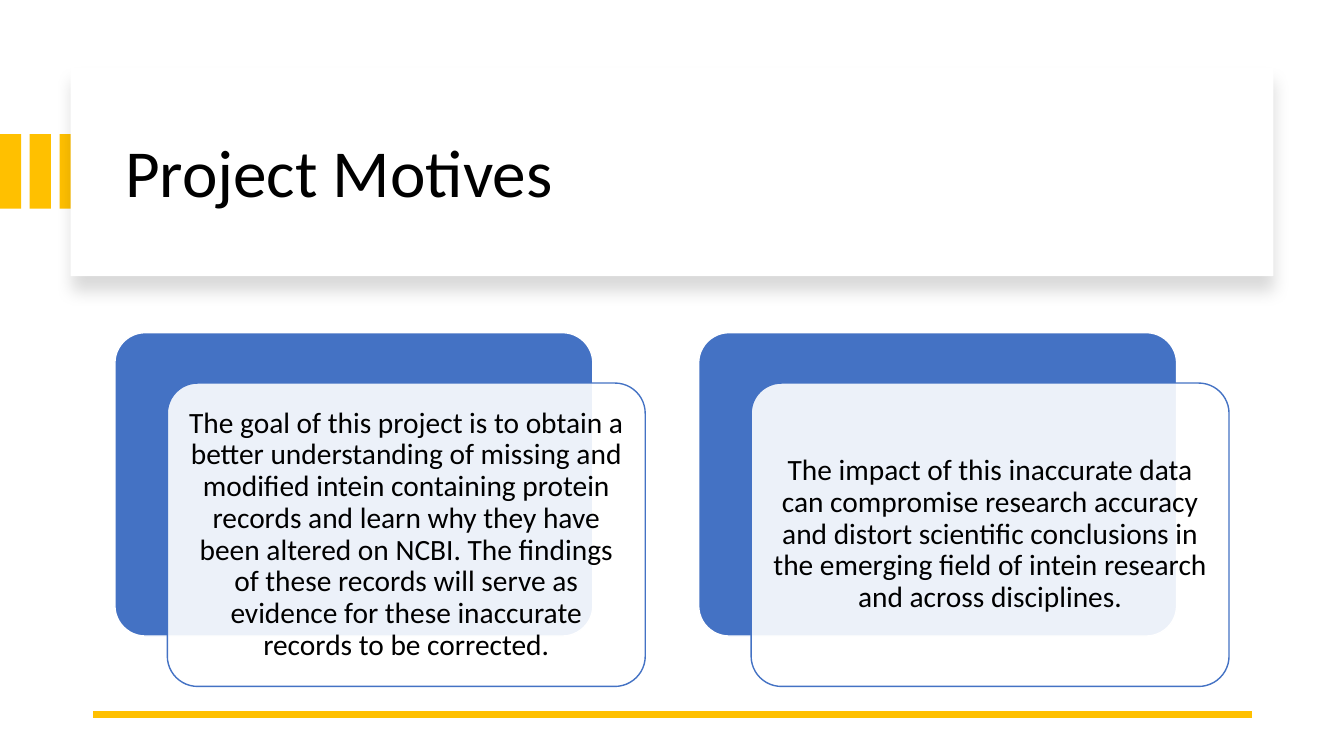
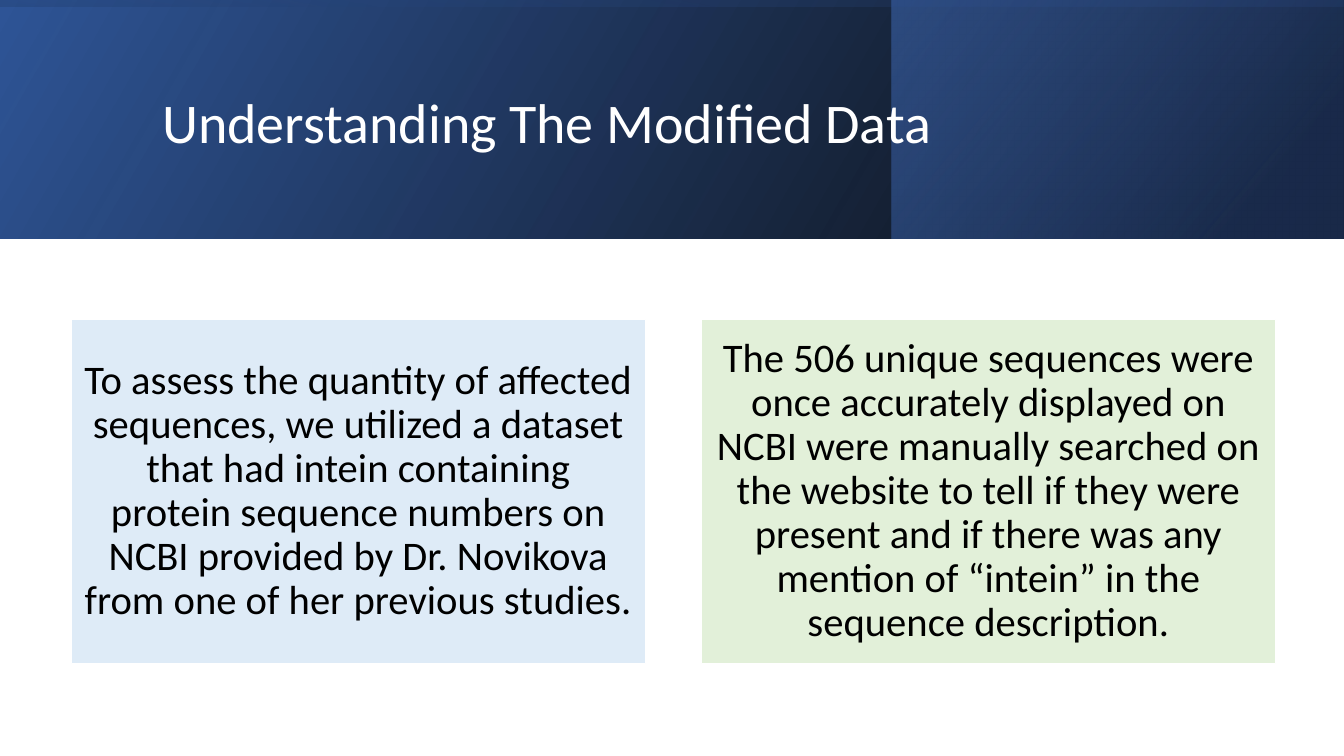
from dataclasses import dataclass

from lxml import etree
from pptx import Presentation
from pptx import util as u
from pptx.dml import color
from pptx.enum import shapes, text
from pptx.oxml import ns


@dataclass(frozen=True)
class Theme:
    font: str = "Calibri"
    black: str = "000000"
    white: str = "FFFFFF"
    gold: str = "FFC000"
    blue: str = "4472C4"
    deep_blue: str = "2F5597"
    navy: str = "203864"
    pale_blue: str = "DEEBF7"
    pale_green: str = "E2F0D9"
    banner_title_size: int = 40
    title_size: int = 48
    card_size: int = 21
    panel_size: int = 29
    outline: int = 1
    rule: float = 4.5


THEME = Theme()
TITLE_ONLY = 5
RECTANGLE = shapes.MSO_SHAPE.RECTANGLE
ROUNDED = shapes.MSO_SHAPE.ROUNDED_RECTANGLE

MOTIVES = [
    "The goal of this project is to obtain a better understanding of missing and "
    "modified intein containing protein records and learn why they have been altered "
    "on NCBI. The findings of these records will serve as evidence for these "
    "inaccurate records to be corrected.",
    "The impact of this inaccurate data can compromise research accuracy and distort "
    "scientific conclusions in the emerging field of intein research and across "
    "disciplines.",
]
DATA_NOTES = [
    ("To assess the quantity of affected sequences, we utilized a dataset that had "
     "intein containing protein sequence numbers on NCBI provided by Dr. Novikova "
     "from one of her previous studies.", THEME.pale_blue),
    ("The 506 unique sequences were once accurately displayed on NCBI were manually "
     "searched on the website to tell if they were present and if there was any "
     "mention of “intein” in the sequence description.", THEME.pale_green),
]


def rgb(value):
    return color.RGBColor.from_string(value)


def add_child(parent, tag, **attributes):
    child = etree.SubElement(parent, ns.qn(tag))
    for name, value in attributes.items():
        child.set(name, str(value))
    return child


def add_color(parent, value, opacity):
    node = add_child(parent, "a:srgbClr", val=value)
    if opacity < 100:
        add_child(node, "a:alpha", val=opacity * 1000)


def add_box(slide, kind, left, top, width, height, fill=None, line=None):
    shape = slide.shapes.add_shape(
        kind, u.Inches(left), u.Inches(top), u.Inches(width), u.Inches(height))
    shape.shadow.inherit = False
    if fill:
        shape.fill.solid()
        shape.fill.fore_color.rgb = rgb(fill)
    if line:
        shape.line.color.rgb = rgb(line)
        shape.line.width = u.Pt(THEME.outline)
    else:
        shape.line.fill.background()
    return shape


def format_text(shape, wording, size, font_color, alignment, inset):
    frame = shape.text_frame
    frame.text = wording
    frame.word_wrap = True
    frame.auto_size = text.MSO_AUTO_SIZE.NONE
    frame.vertical_anchor = text.MSO_ANCHOR.MIDDLE
    frame.margin_left = frame.margin_right = u.Inches(inset[0])
    frame.margin_top = frame.margin_bottom = u.Inches(inset[1])
    for paragraph in frame.paragraphs:
        paragraph.alignment = alignment
        paragraph.line_spacing = 0.9
        for run in paragraph.runs:
            run.font.name = THEME.font
            run.font.size = u.Pt(size)
            run.font.color.rgb = rgb(font_color)


def set_title(slide, wording, left, top, width, height, size, font_color):
    title = slide.shapes.title
    title.left, title.top = u.Inches(left), u.Inches(top)
    title.width, title.height = u.Inches(width), u.Inches(height)
    format_text(title, wording, size, font_color, text.PP_ALIGN.LEFT, (0.1, 0.05))


def send_to_back(slide, background):
    tree = slide.shapes.title.element.getparent()
    for shape in background:
        slide.shapes.title.element.addprevious(shape.element)
    return tree


def add_soft_shadow(shape, blur, distance, direction, opacity):
    effects = shape.element.spPr.find(ns.qn("a:effectLst"))
    shadow = add_child(
        effects, "a:outerShdw", blurRad=int(u.Pt(blur)), dist=int(u.Pt(distance)),
        dir=direction * 60000, algn="t", rotWithShape=0)
    add_color(shadow, THEME.black, opacity)


def add_gradient(shape, stops, angle):
    gradient = etree.Element(ns.qn("a:gradFill"), rotWithShape="1")
    stop_list = add_child(gradient, "a:gsLst")
    for position, value, opacity in stops:
        stop = add_child(stop_list, "a:gs", pos=position * 1000)
        add_color(stop, value, opacity)
    add_child(gradient, "a:lin", ang=angle * 60000, scaled=0)
    properties = shape.element.spPr
    properties.find(ns.qn("a:prstGeom")).addnext(gradient)
    properties.find(ns.qn("a:xfrm")).set("flipH", "1")


def add_rule(slide, start, end, top):
    rule = slide.shapes.add_connector(
        shapes.MSO_CONNECTOR.STRAIGHT,
        u.Inches(start), u.Inches(top), u.Inches(end), u.Inches(top))
    rule.line.color.rgb = rgb(THEME.gold)
    rule.line.width = u.Pt(THEME.rule)
    add_child(rule.element.spPr, "a:effectLst")


def add_layered_card(slide, left, top, wording):
    width, height = 4.74, 3.01
    back = add_box(slide, ROUNDED, left, top, width, height, THEME.blue, THEME.white)
    front = add_box(slide, ROUNDED, left + 0.52, top + 0.5, width, height,
                    THEME.white, THEME.blue)
    for card in (back, front):
        card.adjustments[0] = 0.1
    fill_color = front.element.spPr.find(ns.qn("a:solidFill"))[0]
    add_child(fill_color, "a:alpha", val=90000)
    format_text(front, wording, THEME.card_size, THEME.black,
                text.PP_ALIGN.CENTER, (0.09, 0.09))


def build_motives(presentation):
    slide = presentation.slides.add_slide(presentation.slide_layouts[TITLE_ONLY])
    background = [
        add_box(slide, RECTANGLE, index * 0.295, 1.33, 0.21, 0.74, THEME.gold)
        for index in range(3)
    ]
    title_panel = add_box(slide, RECTANGLE, 0.7, 0.67, 11.93, 2.07, THEME.white)
    add_soft_shadow(title_panel, blur=11, distance=10, direction=90, opacity=15)
    send_to_back(slide, background + [title_panel])
    set_title(slide, "Project Motives", 1.14, 0.89, 11.13, 1.7,
              THEME.title_size, THEME.black)
    add_rule(slide, 12.42, 0.92, 7.09)
    for index, wording in enumerate(MOTIVES):
        add_layered_card(slide, 1.14 + index * 5.79, 3.3, wording)


def build_modified_data(presentation):
    slide = presentation.slides.add_slide(presentation.slide_layouts[TITLE_ONLY])
    width, height = 13.33, 2.37
    band = add_box(slide, RECTANGLE, 0, 0, width, height)
    add_gradient(band, [(0, THEME.black, 96), (100, THEME.deep_blue, 100)], 330)
    accent = add_box(slide, RECTANGLE, 8.84, 0, 4.48, height)
    add_gradient(accent, [(19, THEME.navy, 68), (100, THEME.blue, 48)], 320)
    shade = add_box(slide, RECTANGLE, (width - height) / 2, (height - width) / 2,
                    height, width)
    shade.rotation = 270
    add_gradient(shade, [(23, THEME.deep_blue, 16), (99, THEME.black, 45)], 350)
    send_to_back(slide, [band, accent, shade])
    set_title(slide, "Understanding The Modified Data", 1.51, 0.38, 10.63, 1.72,
              THEME.banner_title_size, THEME.white)
    for index, (wording, fill) in enumerate(DATA_NOTES):
        panel = add_box(slide, RECTANGLE, 0.71 + index * 6.25, 3.17, 5.69, 3.41,
                        fill, THEME.white)
        format_text(panel, wording, THEME.panel_size, THEME.black,
                    text.PP_ALIGN.CENTER, (0.12, 0.12))


def main():
    presentation = Presentation()
    presentation.slide_width = u.Inches(13.33)
    presentation.slide_height = u.Inches(7.5)
    build_motives(presentation)
    build_modified_data(presentation)
    presentation.save("out.pptx")


if __name__ == "__main__":
    main()
